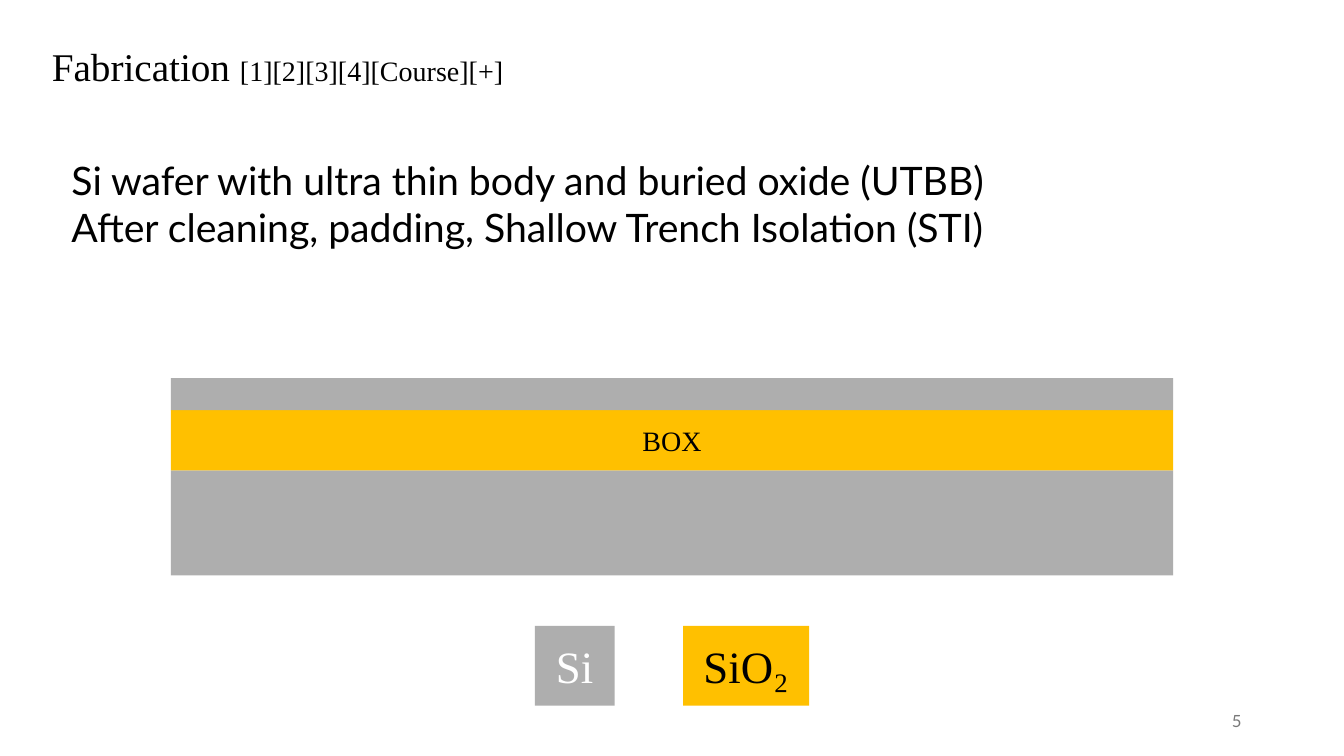
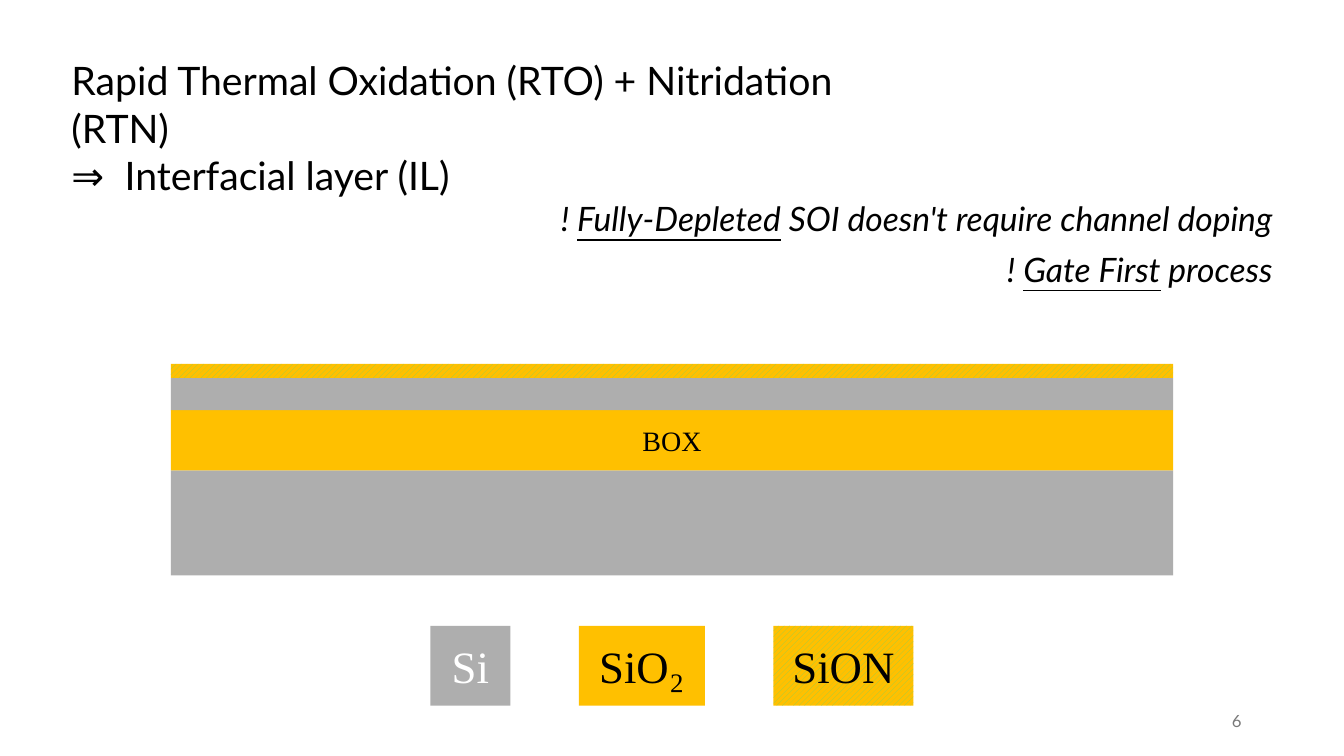
"""Builds two slides on the fabrication of a silicon-on-insulator wafer."""
from lxml import etree
from pptx import Presentation
from pptx import util as u
from pptx.dml.color import RGBColor
from pptx.enum import dml, shapes, text
from pptx.oxml import ns

Pt = u.Pt
COLORS = {"ink": "000000", "light": "FFFFFF", "muted": "797979",
          "silicon": "AEAEAE", "oxide": "FFC000", "hatch": "92D050"}
SANS, SERIF = "Lato", "Times New Roman"
PAGE_WIDTH, PAGE_HEIGHT = 960, 540
STACK = (122, 411, 716)
WAFER = [("silicon", 75, ""), ("oxide", 43, "BOX"), ("silicon", 23, "")]
LEGEND_TOP, LEGEND_HEIGHT, LEGEND_GAP = 447, 57, 49
KEYS = {"Si": ("silicon", 57, "light"), "SiO₂": ("oxide", 90, "ink"),
        "SiON": ("oxynitride", 100, "ink")}


def color(name):
    """Return the named colour."""
    return RGBColor.from_string(COLORS[name])


def write(frame, lines, size=28, font=SANS, ink="ink", align="LEFT",
          anchor="TOP", italic=False, tab=None):
    """Fill a text frame with lines, each a string or (text, changes) spans."""
    frame.word_wrap = True
    frame.vertical_anchor = getattr(text.MSO_ANCHOR, anchor)
    for number, line in enumerate(lines):
        para = frame.add_paragraph() if number else frame.paragraphs[0]
        para.alignment = getattr(text.PP_ALIGN, align)
        if tab:
            stops = etree.SubElement(para._p.get_or_add_pPr(), ns.qn("a:tabLst"))
            etree.SubElement(stops, ns.qn("a:tab"), pos=str(Pt(tab)), algn="l")
        for words, changes in [(line, {})] if isinstance(line, str) else line:
            span = para.add_run()
            span.text = words
            span.font.name = font
            span.font.size = Pt(changes.get("size", size))
            span.font.color.rgb = color(ink)
            span.font.italic = italic
            span.font.underline = changes.get("underline", False)


def add_text(page, box, lines, **style):
    """Add a text box at (left, top, width, height)."""
    label = page.shapes.add_textbox(*map(Pt, box))
    write(label.text_frame, lines, **style)


def add_block(page, box, material, label="", **style):
    """Add a borderless rectangle of one material with a centred label."""
    block = page.shapes.add_shape(shapes.MSO_SHAPE.RECTANGLE, *map(Pt, box))
    block.shadow.inherit = False
    block.line.fill.background()
    if material == "oxynitride":
        block.fill.patterned()
        block.fill.pattern = dml.MSO_PATTERN.WIDE_UPWARD_DIAGONAL
        block.fill.fore_color.rgb = color("hatch")
        block.fill.back_color.rgb = color("oxide")
    else:
        block.fill.solid()
        block.fill.fore_color.rgb = color(material)
    if label:
        write(block.text_frame, [label], font=SERIF, align="CENTER",
              anchor="MIDDLE", **style)


def add_stack(page, box, layers):
    """Pile layers upwards from the bottom edge in (left, bottom, width)."""
    left, top, width = box
    for material, height, label in layers:
        top -= height
        add_block(page, (left, top, width, height), material, label, size=20)


def add_legend(page, names):
    """Centre a row of material keys on the page."""
    total = sum(KEYS[name][1] for name in names) + LEGEND_GAP * (len(names) - 1)
    left = (PAGE_WIDTH - total) / 2
    for name in names:
        material, width, ink = KEYS[name]
        add_block(page, (left, LEGEND_TOP, width, LEGEND_HEIGHT), material,
                  name, size=32, ink=ink)
        left += width + LEGEND_GAP


def add_notes(page, box, notes):
    """Stack right-aligned remarks, each with an underlined key term."""
    left, top, width, pitch = box
    for number, (term, rest) in enumerate(notes):
        line = [("! ", {}), (term, {"underline": True}), (rest, {})]
        add_text(page, (left, top + number * pitch, width, pitch), [line],
                 size=24, align="RIGHT", italic=True)


def add_step(deck, number, layers, names):
    """Add a page with wafer section, legend and page number."""
    page = deck.slides.add_slide(deck.slide_layouts[6])
    add_stack(page, STACK, layers)
    add_legend(page, names)
    add_text(page, (678, 500, 216, 29), [str(number)], size=12, ink="muted",
             align="RIGHT", anchor="MIDDLE")
    return page


def main():
    """Build and save the deck."""
    deck = Presentation()
    deck.slide_width, deck.slide_height = Pt(PAGE_WIDTH), Pt(PAGE_HEIGHT)

    page = add_step(deck, 5, WAFER, ["Si", "SiO₂"])
    add_text(page, (30, 27, 368, 41),
             [[("Fabrication ", {}), ("[1][2][3][4][Course][+]", {"size": 20})]],
             font=SERIF)
    add_text(page, (44, 108, 720, 75),
             ["Si wafer with ultra thin body and buried oxide (UTBB)",
              "After cleaning, padding, Shallow Trench Isolation (STI)"])

    page = add_step(deck, 6, WAFER + [("oxynitride", 10, "")], list(KEYS))
    add_text(page, (44, 37, 621, 109),
             ["Rapid Thermal Oxidation (RTO) + Nitridation (RTN)",
              "⇒\tInterfacial layer (IL)"], tab=38)
    add_notes(page, (346, 138, 570, 36),
              [("Fully-Depleted", " SOI doesn't require channel doping"),
               ("Gate First", " process")])
    deck.save("out.pptx")


if __name__ == "__main__":
    main()
